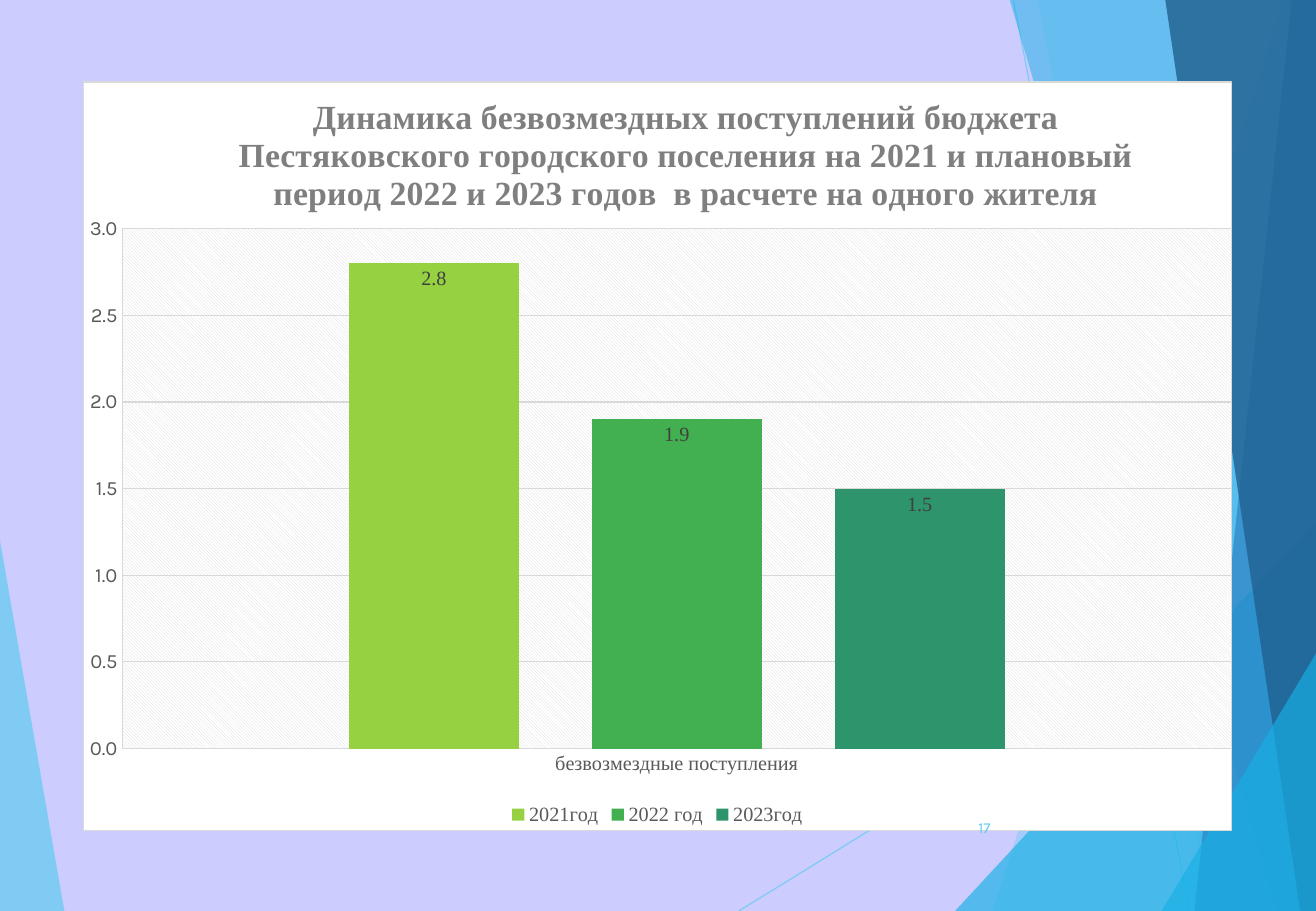
from dataclasses import dataclass

from lxml.etree import SubElement
from pptx import Presentation
from pptx.chart.chart import Chart
from pptx.chart.data import CategoryChartData
from pptx.dml.color import RGBColor
from pptx.enum.chart import (XL_CHART_TYPE, XL_LABEL_POSITION,
                             XL_LEGEND_POSITION, XL_TICK_MARK)
from pptx.enum.shapes import MSO_CONNECTOR
from pptx.enum.text import MSO_ANCHOR, PP_ALIGN
from pptx.oxml import parse_xml
from pptx.oxml.ns import nsdecls, qn
from pptx.slide import Slide
from pptx.text.text import Font
from pptx.util import Inches, Pt

Point = tuple[float, float]
WIDTH, HEIGHT = 10.83, 7.5


@dataclass(frozen=True)
class Theme:
    background: str = "CCCCFF"
    sky: str = "5FCBEF"
    cyan: str = "17B0E4"
    blue: str = "2E83C3"
    navy: str = "226292"
    paper: str = "FFFFFF"
    grid: str = "D9D9D9"
    title: str = "7F7F7F"
    axis_text: str = "595959"
    label_text: str = "404040"
    serif: str = "Times New Roman"
    sans: str = "Karla"
    title_size: float = 20
    chart_size: float = 12
    number_size: float = 9
    line_width: float = 0.75


@dataclass(frozen=True)
class Facet:
    points: tuple[Point, ...]
    color: str
    opacity: int


@dataclass(frozen=True)
class Ray:
    start: Point
    end: Point


@dataclass(frozen=True)
class YearBar:
    name: str
    value: float
    color: str


THEME = Theme()
TOP_RIGHT, BOTTOM_RIGHT = (WIDTH, 0), (WIDTH, HEIGHT)

LEFT_FACET = Facet(((0, 4.45), (0.53, HEIGHT), (0, HEIGHT)), THEME.sky, 70)
RAYS = (Ray((6.08, HEIGHT), (WIDTH, 4.57)), Ray((8.34, 0), (9.79, HEIGHT)))
RIGHT_FACETS = (
    Facet(((10.56, 0), (8.17, HEIGHT), BOTTOM_RIGHT, TOP_RIGHT), THEME.sky, 36),
    Facet(((8.54, 0), (9.96, HEIGHT), BOTTOM_RIGHT, TOP_RIGHT), THEME.sky, 20),
    Facet(((7.86, HEIGHT), (WIDTH, 4.29), BOTTOM_RIGHT), THEME.cyan, 66),
    Facet(((8.31, 0), (10.51, HEIGHT), BOTTOM_RIGHT, TOP_RIGHT), THEME.cyan, 50),
    Facet(((10.63, 0), (9.83, HEIGHT), BOTTOM_RIGHT, TOP_RIGHT), THEME.blue, 70),
    Facet(((9.59, 0), (10.7, HEIGHT), BOTTOM_RIGHT, TOP_RIGHT), THEME.navy, 82),
    Facet(((9.56, HEIGHT), (WIDTH, 5.38), BOTTOM_RIGHT), THEME.cyan, 66),
)
YEARS = (
    YearBar("2021год", 2.8, "96D141"),
    YearBar("2022 год", 1.9, "42B051"),
    YearBar("2023год", 1.5, "2E946B"),
)
TITLE = ("Динамика безвозмездных поступлений бюджета Пестяковского городского "
         "поселения на 2021 и плановый период 2022 и 2023 годов  в расчете "
         "на одного жителя")


def rgb(value: str) -> RGBColor:
    return RGBColor.from_string(value)


def set_font(font: Font, *, name: str, size: float, color: str,
             bold: bool = False) -> None:
    font.name, font.size, font.bold = name, Pt(size), bold
    font.color.rgb = rgb(color)


def set_opacity(shape, percent: int) -> None:
    color = shape.element.xpath("./p:spPr//a:solidFill/a:srgbClr")[0]
    SubElement(color, qn("a:alpha")).set("val", str(percent * 1000))


def draw_facet(slide: Slide, facet: Facet) -> None:
    start, *others = [(Inches(x), Inches(y)) for x, y in facet.points]
    builder = slide.shapes.build_freeform(*start)
    builder.add_line_segments(others, close=True)
    shape = builder.convert_to_shape()
    shape.shadow.inherit = False
    shape.fill.solid()
    shape.fill.fore_color.rgb = rgb(facet.color)
    set_opacity(shape, facet.opacity)
    shape.line.fill.background()


def draw_ray(slide: Slide, ray: Ray) -> None:
    line = slide.shapes.add_connector(
        MSO_CONNECTOR.STRAIGHT, *(Inches(value) for value in ray.start + ray.end))
    line.line.color.rgb = rgb(THEME.sky)
    line.line.width = Pt(THEME.line_width)
    set_opacity(line, 70)
    SubElement(line.element.spPr, qn("a:effectLst"))


def add_text(slide: Slide, text: str, *, at: tuple[float, float, float, float],
             name: str, size: float, color: str, align: PP_ALIGN) -> None:
    box = slide.shapes.add_textbox(*(Inches(value) for value in at))
    box.text_frame.word_wrap = True
    box.text_frame.vertical_anchor = MSO_ANCHOR.MIDDLE
    para = box.text_frame.paragraphs[0]
    para.alignment = align
    span = para.add_run()
    span.text = text
    set_font(span.font, name=name, size=size, color=color)


def manual_layout(parent, index: int, *, inner: bool = False, **sizes: float) -> None:
    """Place a chart part by fractions of the chart's width and height."""
    for old in parent.xpath("./c:layout"):
        parent.remove(old)
    target = '<c:layoutTarget val="inner"/>' if inner else ""
    modes = "".join(f'<c:{key}Mode val="edge"/>' for key in "xy")
    values = "".join(f'<c:{key} val="{value}"/>' for key, value in sizes.items())
    parent.insert(index, parse_xml(
        f'<c:layout {nsdecls("c")}><c:manualLayout>{target}{modes}{values}'
        '</c:manualLayout></c:layout>'))


def style_backgrounds(chart: Chart) -> None:
    def solid(color: str) -> str:
        return f'<a:solidFill><a:srgbClr val="{color}"/></a:solidFill>'

    def properties(content: str):
        return parse_xml(f'<c:spPr {nsdecls("c", "a")}>{content}</c:spPr>')

    width = Pt(THEME.line_width)
    chart.element.xpath("./c:chart")[0].addnext(properties(
        f'{solid(THEME.paper)}<a:ln w="{width}">{solid(THEME.grid)}</a:ln>'))
    plot_area = chart.element.xpath(".//c:plotArea")[0]
    plot_area.append(properties(
        '<a:pattFill prst="ltDnDiag">'
        f'<a:fgClr><a:srgbClr val="{THEME.grid}"/></a:fgClr>'
        f'<a:bgClr><a:srgbClr val="{THEME.paper}"/></a:bgClr></a:pattFill>'
        '<a:ln><a:noFill/></a:ln>'))
    manual_layout(plot_area, 0, inner=True, x=0.034, y=0.196, w=0.966, h=0.695)


def style_axes(chart: Chart) -> None:
    category, value = chart.category_axis, chart.value_axis
    for axis, name in ((category, THEME.serif), (value, THEME.sans)):
        axis.major_tick_mark = axis.minor_tick_mark = XL_TICK_MARK.NONE
        axis.has_major_gridlines = True
        grid = axis.major_gridlines.format.line
        grid.color.rgb, grid.width = rgb(THEME.grid), Pt(THEME.line_width)
        set_font(axis.tick_labels.font, name=name, size=THEME.chart_size,
                 color=THEME.axis_text)
    category.format.line.color.rgb = rgb(THEME.grid)
    category.format.line.width = Pt(THEME.line_width)
    value.format.line.fill.background()
    value.minimum_scale, value.maximum_scale, value.major_unit = 0, 3, 0.5
    value.tick_labels.number_format = "0.0"
    value.tick_labels.number_format_is_linked = False


def style_bars(chart: Chart) -> None:
    plot = chart.plots[0]
    plot.gap_width, plot.overlap, plot.vary_by_categories = 267, -43, False
    for series, year in zip(plot.series, YEARS):
        series.format.fill.solid()
        series.format.fill.fore_color.rgb = rgb(year.color)
        labels = series.data_labels
        labels.show_value = True
        labels.position = XL_LABEL_POSITION.INSIDE_END
        labels.number_format, labels.number_format_is_linked = "0.0", False
        set_font(labels.font, name=THEME.serif, size=THEME.chart_size,
                 color=THEME.label_text)


def add_income_chart(slide: Slide) -> None:
    data = CategoryChartData(number_format="0.0")
    data.categories = ["безвозмездные поступления"]
    for year in YEARS:
        data.add_series(year.name, [year.value])
    chart = slide.shapes.add_chart(
        XL_CHART_TYPE.COLUMN_CLUSTERED, Inches(0.68), Inches(0.67),
        Inches(9.46), Inches(6.17), data).chart
    set_font(chart.font, name=THEME.sans, size=10, color="000000")
    frame = chart.chart_title.text_frame
    frame.text = TITLE
    set_font(frame.paragraphs[0].runs[0].font, name=THEME.serif,
             size=THEME.title_size, color=THEME.title, bold=True)
    manual_layout(chart.element.xpath("./c:chart/c:title")[0], 1, x=0.13, y=0.01)
    chart.has_legend = True
    chart.legend.position = XL_LEGEND_POSITION.BOTTOM
    chart.legend.include_in_layout = False
    set_font(chart.legend.font, name=THEME.serif, size=THEME.chart_size,
             color=THEME.axis_text)
    style_axes(chart)
    style_bars(chart)
    style_backgrounds(chart)


def main() -> None:
    deck = Presentation()
    deck.slide_width, deck.slide_height = Inches(WIDTH), Inches(HEIGHT)
    slide = deck.slides.add_slide(deck.slide_layouts.get_by_name("Blank"))
    slide.background.fill.solid()
    slide.background.fill.fore_color.rgb = rgb(THEME.background)
    draw_facet(slide, LEFT_FACET)
    for ray in RAYS:
        draw_ray(slide, ray)
    for facet in RIGHT_FACETS:
        draw_facet(slide, facet)
    add_income_chart(slide)
    add_text(slide, "17", at=(7.64, 6.61, 0.61, 0.4), name=THEME.sans,
             size=THEME.number_size, color=THEME.sky, align=PP_ALIGN.RIGHT)
    deck.save("out.pptx")


if __name__ == "__main__":
    main()
